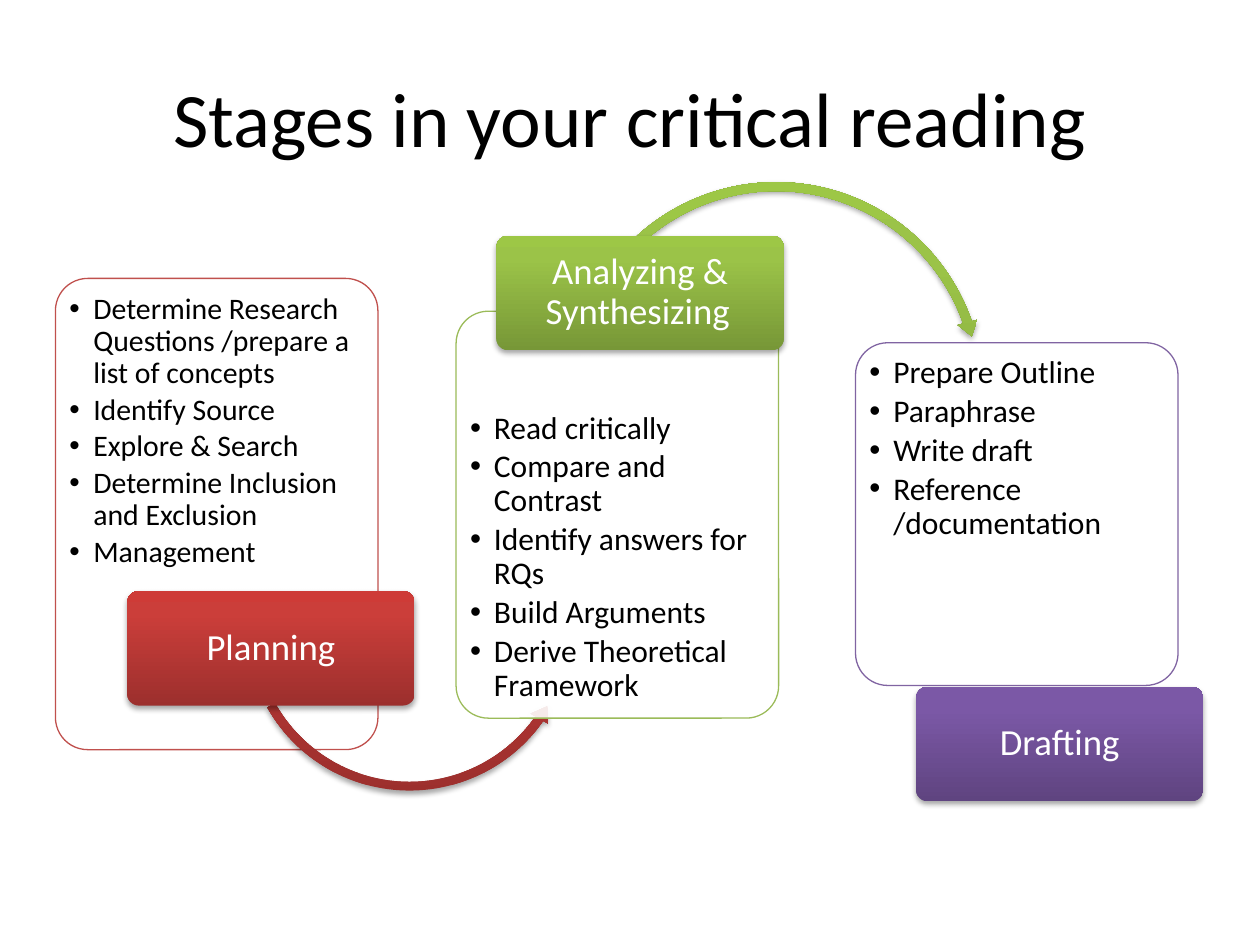
from lxml import etree
from pptx import Presentation, util as u
from pptx.dml.color import RGBColor
from pptx.enum import shapes, text
from pptx.oxml import parse_xml
from pptx.oxml.ns import nsdecls, qn

Inches, Pt = u.Inches, u.Pt
Shape = shapes.MSO_SHAPE


def color(value):
    return RGBColor.from_string(value)


def add_glossy(page, preset, place, adjustments, gradient):
    """Add a borderless shape with a vertical gradient and a soft shadow."""
    shape = page.shapes.add_shape(preset, *map(Inches, place))
    for index, value in enumerate(adjustments):
        shape.adjustments[index] = value
    shape.line.fill.background()
    shape.fill.gradient()
    shape.fill.gradient_angle = 90
    stops = shape._element.spPr.find(qn("a:gradFill")).find(qn("a:gsLst"))
    for stop in list(stops):
        stops.remove(stop)
    for position, value in zip((0, 80, 100), gradient):
        stop = etree.SubElement(stops, qn("a:gs"), pos=str(position * 1000))
        etree.SubElement(stop, qn("a:srgbClr"), val=value)
    shape._element.spPr.append(parse_xml(
        f'<a:effectLst {nsdecls("a")}><a:outerShdw blurRad="40000" dist="23000" '
        'dir="5400000" rotWithShape="0"><a:srgbClr val="000000">'
        '<a:alpha val="35000"/></a:srgbClr></a:outerShdw></a:effectLst>'))
    return shape


RED = ("9C2F2D", "CB3E3A", "CE3B37")
GREEN = ("779737", "9BC348", "9DC746")
PURPLE = ("5F4480", "7B58A6", "7C57A8")

stages = [
    dict(label="Planning", label_at=(1.01, 4.69), gradient=RED, outline="C0504D",
         panel=(0.44, 2.21, 2.56, 3.74), list_at=(0.51, 2.29, 2.41, 2.79), size=17,
         items=["Determine Research Questions /prepare a list of concepts",
                "Identify Source", "Explore & Search",
                "Determine Inclusion and Exclusion", "Management"],
         arrow=(Shape.LEFT_CIRCULAR_ARROW, (1.91, 3.64, 2.68, 2.68),
                (0.026, 3.157, 21.037, 90.37, 0.03))),
    dict(label="Analyzing & Synthesizing\t", label_at=(3.94, 1.87), gradient=GREEN,
         outline="9BBB59", panel=(3.62, 2.47, 2.56, 3.23),
         list_at=(3.69, 3.23, 2.41, 2.39), size=18,
         items=["Read critically", "Compare and Contrast", "Identify answers for RQs",
                "Build Arguments", "Derive Theoretical Framework"],
         arrow=(Shape.CIRCULAR_ARROW, (4.47, 1.4, 3.38, 3.38),
                (0.021, 2.465, 204.432, 134.407, 0.024))),
    dict(label="Drafting", label_at=(7.27, 5.45), gradient=PURPLE, outline="8064A2",
         panel=(6.79, 2.72, 2.56, 2.72), list_at=(6.86, 2.79, 2.44, 2.01), size=18,
         items=["Prepare Outline", "Paraphrase", "Write draft",
                "Reference /documentation"],
         arrow=None),
]

deck = Presentation()
deck.slide_width, deck.slide_height = Inches(10), Inches(7.5)
page = deck.slides.add_slide(deck.slide_layouts[5])

title = page.shapes.title
title.left, title.top = Inches(0.5), Inches(0.3)
title.width, title.height = Inches(9), Inches(1.25)
title.text_frame.vertical_anchor = text.MSO_ANCHOR.MIDDLE
para = title.text_frame.paragraphs[0]
para.alignment = text.PP_ALIGN.CENTER
span = para.add_run()
span.text = "Stages in your critical reading"
span.font.name, span.font.size = "Calibri", Pt(44)
span.font.color.rgb = color("000000")

for stage in stages:
    panel = page.shapes.add_shape(Shape.ROUNDED_RECTANGLE, *map(Inches, stage["panel"]))
    panel.adjustments[0] = 0.1
    panel.shadow.inherit = False
    panel.fill.solid()
    panel.fill.fore_color.rgb = color("FFFFFF")
    white = panel._element.spPr.find(qn("a:solidFill"))[0]
    etree.SubElement(white, qn("a:alpha"), val="90000")
    panel.line.color.rgb = color(stage["outline"])
    panel.line.width = Pt(0.75)

    box = page.shapes.add_textbox(*map(Inches, stage["list_at"]))
    frame = box.text_frame
    frame.word_wrap = True
    frame.margin_left = frame.margin_right = Inches(0.04)
    frame.margin_top = frame.margin_bottom = Inches(0.04)
    for index, item in enumerate(stage["items"]):
        para = frame.add_paragraph() if index else frame.paragraphs[0]
        para.level = 1
        para.line_spacing = 0.9
        para.space_after = Pt(0.15 * stage["size"])
        properties = para._p.get_or_add_pPr()
        properties.set("marL", str(Inches(0.19)))
        properties.set("indent", str(-Inches(0.19)))
        etree.SubElement(properties, qn("a:buFont"), typeface="Arial")
        etree.SubElement(properties, qn("a:buChar"), char="•")
        span = para.add_run()
        span.text = item
        span.font.name, span.font.size = "Calibri", Pt(stage["size"])
        span.font.color.rgb = color("000000")

    if stage["arrow"]:
        add_glossy(page, *stage["arrow"], stage["gradient"])

    label = add_glossy(page, Shape.ROUNDED_RECTANGLE, (*stage["label_at"], 2.28, 0.91),
                       [0.1], stage["gradient"])
    frame = label.text_frame
    frame.word_wrap = True
    frame.vertical_anchor = text.MSO_ANCHOR.MIDDLE
    frame.margin_left = frame.margin_right = Inches(0.07)
    frame.margin_top = frame.margin_bottom = Inches(0.05)
    para = frame.paragraphs[0]
    para.alignment = text.PP_ALIGN.CENTER
    para.line_spacing = 0.9
    span = para.add_run()
    span.text = stage["label"]
    span.font.name, span.font.size = "Calibri", Pt(21)
    span.font.color.rgb = color("FFFFFF")

deck.save("out.pptx")
